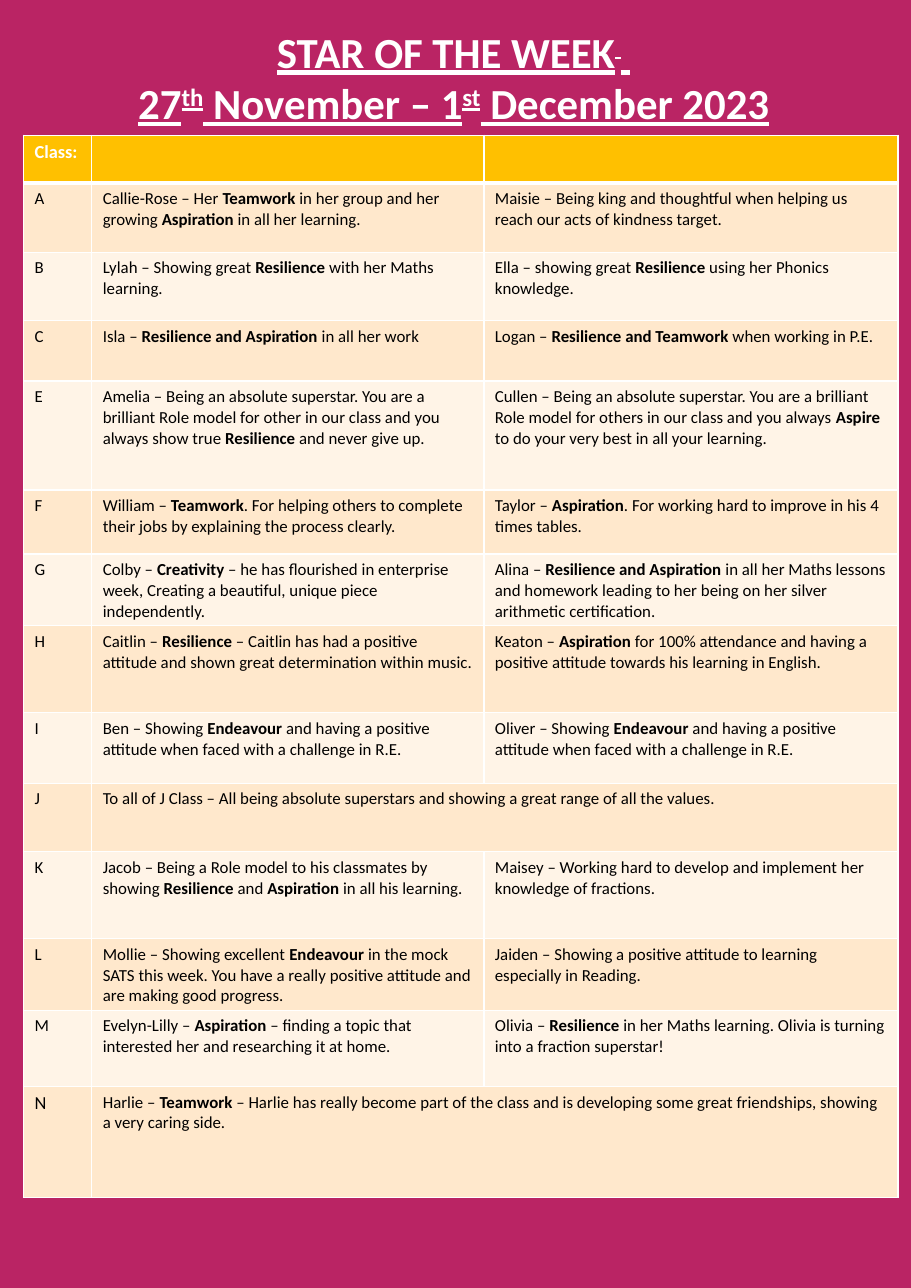
"""Build the Star of the Week poster with its class awards table."""
from lxml.etree import SubElement
from pptx import Presentation
from pptx.enum.shapes import MSO_SHAPE
from pptx.enum.text import PP_ALIGN
from pptx.oxml.ns import qn
from pptx.util import Pt
from pptx.dml.color import RGBColor


def paint(fill, color):
    fill.solid()
    fill.fore_color.rgb = RGBColor.from_string(color)


def add_spans(para, text, size, color):
    """Write text whose odd parts between * signs are marked, and return the marked runs."""
    marked = []
    for index, part in enumerate(text.split("*")):
        if part:
            span = para.add_run()
            span.text = part
            span.font.name = "Calibri"
            span.font.size = Pt(size)
            span.font.bold = False
            paint(span.font.fill, color)
            if index % 2:
                marked.append(span)
    return marked


PINK, WHITE, BLACK, GOLD = "BA2464", "FFFFFF", "000000", "FFC000"
BANDS = ["FFE8CC", "FFF4E7"]

deck = Presentation()
deck.slide_width, deck.slide_height = Pt(595.44), Pt(841.68)
page = deck.slides.add_slide(deck.slide_layouts[6])

frame_bars = [
    (-0.7, -1.4, 595.4, 127.4),
    (0, 15, 30, 827),
    (556.6, -2.9, 38.9, 827.3),
    (0, 778.3, 595.4, 64),
]
for bar in frame_bars:
    box = page.shapes.add_shape(MSO_SHAPE.RECTANGLE, *map(Pt, bar))
    box.shadow.inherit = False
    paint(box.fill, PINK)
    box.line.fill.background()

title = page.shapes.add_textbox(Pt(20), Pt(13), Pt(553), Pt(75))
title.text_frame.word_wrap = True
title_lines = ["STAR OF THE WEEK* * ", "27*th* November – 1*st* December 2023"]
for index, line in enumerate(title_lines):
    para = title.text_frame.paragraphs[0] if index == 0 else title.text_frame.add_paragraph()
    para.alignment = PP_ALIGN.CENTER
    raised = add_spans(para, line, 28, WHITE)
    for span in para.runs:
        span.font.bold = True
        span.font.underline = True
    for span in raised:
        span.font._element.set("baseline", "30000")

awards = [
    (31, "*Class:*", "", ""),
    (45.4, "A", "Callie-Rose – Her* Teamwork* in her group and her growing* Aspiration* in all her learning.",
     "Maisie – Being king and thoughtful when helping us reach our acts of kindness target."),
    (44.6, "B", "Lylah – Showing great* Resilience* with her Maths learning.",
     "Ella – showing great *Resilience* using her Phonics knowledge."),
    (39.6, "C", "Isla – *Resilience and Aspiration* in all her work",
     "Logan – *Resilience and Teamwork* when working in P.E."),
    (71.3, "E", "Amelia – Being an absolute superstar. You are a brilliant Role model for other in our class "
     "and you always show true* Resilience* and never give up.",
     "Cullen – Being an absolute superstar. You are a brilliant Role model for others in our class "
     "and you always *Aspire* to do your very best in all your learning."),
    (41.8, "F", "William – *Teamwork*. For helping others to complete their jobs by explaining the process clearly.",
     "Taylor – *Aspiration*. For working hard to improve in his 4 times tables."),
    (45.4, "G", "Colby – *Creativity* – he has flourished in enterprise week, "
     "Creating a beautiful, unique piece independently.",
     "Alina – *Resilience and Aspiration* in all her Maths lessons and homework "
     "leading to her being on her silver arithmetic certification."),
    (56.9, "H", "Caitlin – *Resilience* – Caitlin has had a positive attitude "
     "and shown great determination within music.",
     "Keaton – *Aspiration* for 100% attendance and having a positive attitude towards his learning in English."),
    (46.1, "I", "Ben – Showing *Endeavour* and having a positive attitude when faced with a challenge in R.E.",
     "Oliver – Showing *Endeavour* and having a positive attitude when faced with a challenge in R.E."),
    (44.6, "J", "To all of J Class – All being absolute superstars and showing a great range of all the values."),
    (56.9, "K", "Jacob – Being a Role model to his classmates by showing *Resilience* and *Aspiration* "
     "in all his learning.",
     "Maisey – Working hard to develop and implement her knowledge of fractions."),
    (44.6, "L", "Mollie – Showing excellent *Endeavour *in the mock SATS this week. "
     "You have a really positive attitude and are making good progress.",
     "Jaiden – Showing a positive attitude to learning especially in Reading."),
    (49.7, "M", "Evelyn-Lilly – *Aspiration* – finding a topic that interested her and researching it at home.",
     "Olivia – *Resilience* in her Maths learning. Olivia is turning into a fraction superstar!"),
    (72.7, "N", "Harlie – *Teamwork* – Harlie has really become part of the class "
     "and is developing some great friendships, showing a very caring side."),
]
widths = [44.6, 256.3, 270.7]
total_height = sum(award[0] for award in awards)
table = page.shapes.add_table(
    len(awards), len(widths), Pt(15.4), Pt(88.4), Pt(sum(widths)), Pt(total_height)
).table
for column, width in zip(table.columns, widths):
    column.width = Pt(width)

for row, (height, *texts) in enumerate(awards):
    table.rows[row].height = Pt(height)
    if len(texts) == 2:
        table.cell(row, 1).merge(table.cell(row, 2))
    for column in range(len(widths)):
        cell = table.cell(row, column)
        properties = cell._tc.get_or_add_tcPr()
        for side in ("L", "R", "T", "B"):
            thick = (row == 0 and side == "B") or (row == 1 and side == "T")
            border = SubElement(properties, qn(f"a:ln{side}"), w=str(Pt(3 if thick else 1)))
            SubElement(SubElement(border, qn("a:solidFill")), qn("a:srgbClr"), val=WHITE)
        paint(cell.fill, BANDS[(row - 1) % 2] if row else GOLD)
    for column, text in enumerate(texts):
        size = 12 if row == 0 or text == "N" else 11
        para = table.cell(row, column).text_frame.paragraphs[0]
        for span in add_spans(para, text, size, BLACK if row else WHITE):
            span.font.bold = True

deck.save("out.pptx")
